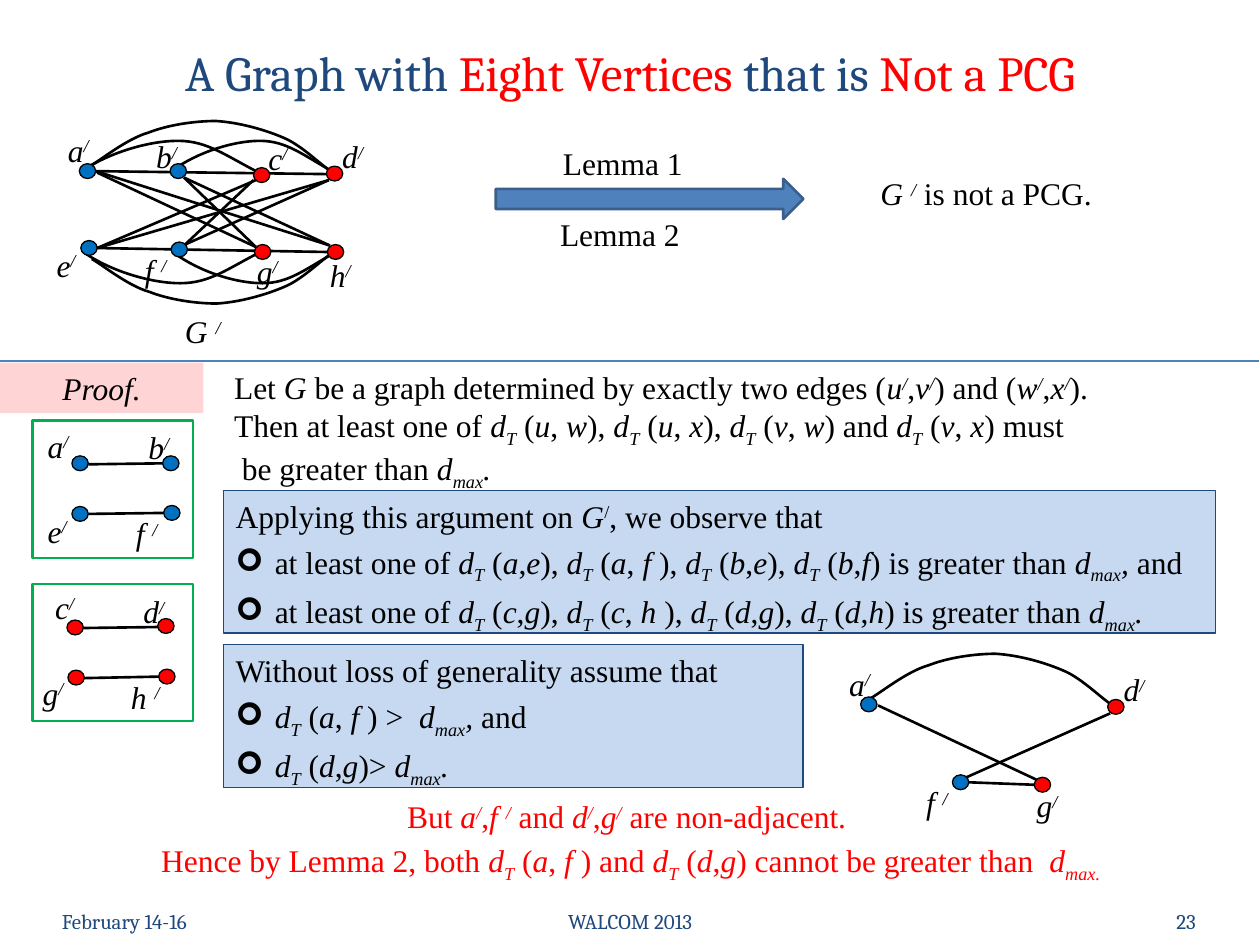
from lxml import etree
from pptx import Presentation
from pptx.dml.color import RGBColor
from pptx.enum.shapes import MSO_CONNECTOR, MSO_SHAPE
from pptx.enum.text import MSO_ANCHOR, MSO_AUTO_SIZE, PP_ALIGN
from pptx.oxml.ns import qn
from pptx.util import Cm, Pt

STRAIGHT = MSO_CONNECTOR.STRAIGHT
RECT, OVAL, ARROW = MSO_SHAPE.RECTANGLE, MSO_SHAPE.OVAL, MSO_SHAPE.DOWN_ARROW
TOP, MIDDLE = MSO_ANCHOR.TOP, MSO_ANCHOR.MIDDLE
GROW, FIXED = MSO_AUTO_SIZE.SHAPE_TO_FIT_TEXT, MSO_AUTO_SIZE.NONE
LEFT, CENTER, RIGHT = PP_ALIGN.LEFT, PP_ALIGN.CENTER, PP_ALIGN.RIGHT

BLACK = RGBColor(0x00, 0x00, 0x00)
RED = RGBColor(0xFF, 0x00, 0x00)
BLUE = RGBColor(0x00, 0x70, 0xC0)
GREEN = RGBColor(0x00, 0xB0, 0x50)
NAVY = RGBColor(0x1F, 0x49, 0x7D)
PALE = RGBColor(0xC6, 0xD9, 0xF1)
STEEL = RGBColor(0x4F, 0x81, 0xBD)
STEEL_DARK = RGBColor(0x3A, 0x5F, 0x8C)

SERIF, HEADING = "Times New Roman", "Cambria"
DMAX = "*d_max_"
LOW_ARC = [(0, .88), (.14, .38), (.36, 0), (.53, 0), (.7, 0), (.8, .46), (1, 1)]
HIGH_ARC = [(0, .88), (.04, .78), (.15, .35), (.24, .23), (.32, .08), (.43, 0), (.52, 0),
            (.62, .03), (.73, .18), (.81, .35), (.88, .5), (.96, .88), (1, 1)]

GRAPH_VERTICES = [
    ("a", BLUE, 1.6, 3.3, 1.12, 2.51), ("b", BLUE, 3.43, 3.3, 2.9, 2.64),
    ("c", RED, 5.11, 3.38, 5.16, 2.67), ("d", RED, 6.58, 3.35, 6.65, 2.64),
    ("e", BLUE, 1.63, 4.85, 0.89, 4.83), ("f ", BLUE, 3.45, 4.88, 2.67, 4.93),
    ("g", RED, 5.13, 4.93, 4.93, 4.95), ("h", RED, 6.6, 4.93, 6.4, 5.03)]
GRAPH_EDGES = [
    (1.96, 3.48, 5.16, 4.98), (1.93, 3.45, 6.65, 4.95), (3.71, 3.58, 5.16, 4.98),
    (3.71, 3.58, 6.65, 4.95), (5.16, 3.63, 1.96, 5), (6.63, 3.63, 1.96, 5),
    (5.11, 3.63, 3.73, 4.93), (6.63, 3.63, 3.73, 4.93), (1.93, 3.45, 6.6, 3.51),
    (1.96, 5, 6.6, 5.08)]
PAIR_VERTICES = [
    ("a", BLUE, 1.45, 9.19, 0.71, 8.48), ("b", BLUE, 3.28, 9.19, 2.74, 8.51),
    ("e", BLUE, 1.45, 10.21, 0.71, 10.19), ("f ", BLUE, 3.3, 10.19, 2.49, 10.24),
    ("c", RED, 1.35, 12.5, 0.86, 11.73), ("d", RED, 3.18, 12.47, 2.64, 11.81),
    ("g", RED, 1.37, 13.51, 0.61, 13.46), ("h ", RED, 3.2, 13.49, 2.39, 13.54)]
PAIR_EDGES = [(1.78, 9.36, 3.28, 9.34), (1.78, 10.36, 3.3, 10.34),
              (1.68, 12.66, 3.18, 12.64), (1.68, 13.67, 3.2, 13.64)]
CYCLE_VERTICES = [
    ("a", BLUE, 17.35, 14.05, 16.87, 13.28), ("d", RED, 22.33, 14.1, 22.4, 13.39),
    ("f ", BLUE, 19.2, 15.62, 18.42, 15.67), ("g", RED, 20.85, 15.67, 20.65, 15.72)]
CYCLE_EDGES = [(17.7, 14.22, 20.9, 15.72), (22.38, 14.38, 19.48, 15.67),
               (19.53, 15.77, 20.85, 15.82)]


def dist(u, v, sep=","):
    """Return the markup of the tree distance between two leaves."""
    return f"*d_T_* (*{u}*{sep}*{v}*)"


def add_runs(p, markup, size, color, font):
    """Add runs, toggling italic *, superscript ^, subscript _ and red |."""
    on = dict.fromkeys("*^_|", False)
    text = ""
    for ch in markup + "*":
        if ch not in on:
            text += ch
            continue
        if text:
            r = p.add_run()
            r.text = text
            r.font.name, r.font.size = font, Pt(size)
            r.font.italic = on["*"]
            r.font.color.rgb = RED if on["|"] else color
            if on["^"] or on["_"]:
                r._r.get_or_add_rPr().set("baseline", "30000" if on["^"] else "-25000")
            text = ""
        on[ch] = not on[ch]


def add_bullet(p):
    """Give a paragraph a hanging arrow bullet."""
    pPr = p._p.get_or_add_pPr()
    pPr.set("marL", str(Cm(0.79)))
    pPr.set("indent", str(-Cm(0.79)))
    etree.SubElement(pPr, qn("a:buFont")).set("typeface", "Wingdings")
    etree.SubElement(pPr, qn("a:buChar")).set("char", "➢")


def fill_text(sp, lines, size=18, color=BLACK, font=SERIF, align=LEFT, anchor=TOP,
              wrap=True, grow=GROW, gaps=(), bullets=False):
    """Write the lines into a shape, with gaps before the later ones."""
    tf = sp.text_frame
    tf.word_wrap, tf.auto_size, tf.vertical_anchor = wrap, grow, anchor
    for i, line in enumerate(lines):
        p = tf.paragraphs[0] if i == 0 else tf.add_paragraph()
        p.alignment = align
        if i and gaps:
            p.space_before = Pt(gaps[i - 1])
        if i and bullets:
            add_bullet(p)
        add_runs(p, line, size, color, font)


def add_text(s, x, y, w, h, lines, **style):
    """Add a text box."""
    fill_text(s.shapes.add_textbox(Cm(x), Cm(y), Cm(w), Cm(h)), lines, **style)


def add_box(s, kind, x, y, w, h, fill=None, line=None, width=0.75):
    """Add a preset shape with optional fill and outline."""
    sp = s.shapes.add_shape(kind, Cm(x), Cm(y), Cm(w), Cm(h))
    sp.shadow.inherit = False
    for part, color in ((sp.fill, fill), (sp.line.fill, line)):
        if color is None:
            part.background()
        else:
            part.solid()
            part.fore_color.rgb = color
    if line is not None:
        sp.line.width = Pt(width)
    return sp


def add_line(s, x1, y1, x2, y2, color=BLACK, width=1.5):
    """Add a straight line."""
    c = s.shapes.add_connector(STRAIGHT, Cm(x1), Cm(y1), Cm(x2), Cm(y2))
    c.line.color.rgb, c.line.width = color, Pt(width)
    etree.SubElement(c._element.spPr, qn("a:effectLst"))


def add_arc(s, curve, x, y, w, h, flip=False):
    """Draw a chain of Bezier curves, given in unit coordinates, inside a box."""
    points = [(Cm(x + w * u), Cm(y + h * (1 - v if flip else v))) for u, v in curve]
    builder = s.shapes.build_freeform(*points[0])
    builder.add_line_segments(points[1:], close=False)
    sp = builder.convert_to_shape()
    outline = next(sp._element.iter(qn("a:path")))
    segments = outline.findall(qn("a:lnTo"))
    for i in range(0, len(segments), 3):
        bezier = etree.SubElement(outline, qn("a:cubicBezTo"))
        for segment in segments[i:i + 3]:
            bezier.append(segment[0])
            outline.remove(segment)
    sp.shadow.inherit = False
    sp.fill.background()
    sp.line.color.rgb, sp.line.width = BLACK, Pt(1.5)


def add_graph(s, vertices, edges):
    """Draw the edges, then the labels and dots of the vertices."""
    for edge in edges:
        add_line(s, *edge)
    for name, color, x, y, label_x, label_y in vertices:
        add_text(s, label_x, label_y, 1.12, 1.02, [f"*{name}^/"], wrap=False)
        add_box(s, OVAL, x, y, 0.33, 0.3, color, BLACK)


def add_panel(s, x, y, w, lines):
    """Add a pale panel with a lead line and bulleted lines."""
    sp = add_box(s, RECT, x, y, w, 2.87, PALE, NAVY)
    fill_text(sp, lines, gaps=(4.6, 3.5), bullets=True)


def main():
    """Build the slide and save it."""
    prs = Presentation()
    prs.slide_width, prs.slide_height = Cm(25.4), Cm(19.05)
    s = prs.slides.add_slide(prs.slide_layouts[6])

    heading = dict(color=NAVY, font=HEADING, anchor=MIDDLE, grow=FIXED)
    add_text(s, 0, 0, 25.4, 2.92, ["A Graph with| Eight Vertices| that is |Not a PCG"],
             size=28, align=CENTER, **heading)
    for x, w, text, align in ((1, 5.92, "February 14-16", LEFT),
                              (8.68, 8.05, "WALCOM 2013", CENTER), (18.44, 5.92, "23", RIGHT)):
        add_text(s, x, 18.06, w, 1.02, [text], size=12, align=align, **heading)

    add_box(s, ARROW, 12.69, 0.91, 0.81, 6.2, STEEL, STEEL_DARK, 1.5).rotation = 270
    add_text(s, 11.1, 2.77, 2.95, 1.02, ["Lemma 1"], wrap=False)
    add_text(s, 11.04, 4.21, 2.95, 1.02, ["Lemma 2"], wrap=False)
    add_text(s, 3.48, 6.17, 1.42, 1.02, ["*G ^/"], wrap=False)
    add_text(s, 17.5, 3.39, 6.38, 1.02, ["*G ^/^* is not a PCG."])

    for flip, x, y, high_x, high_y in ((False, 1.7, 2.84, 1.83, 2.44), (True, 1.75, 5.05, 1.85, 5.1)):
        add_arc(s, LOW_ARC, x, y, 3.56, 0.66, flip)
        add_arc(s, LOW_ARC, x + 1.8, y, 3.28, 0.66, flip)
        add_arc(s, HIGH_ARC, high_x, high_y, 4.85, 1.02, flip)
    add_graph(s, GRAPH_VERTICES, GRAPH_EDGES)

    add_line(s, -0.02, 7.28, 25.38, 7.28, STEEL, 1)
    sp = add_box(s, RECT, 0, 7.31, 4.1, 1.02, RED)
    color = sp.fill._xPr.find(qn("a:solidFill"))[0]
    etree.SubElement(color, qn("a:alpha")).set("val", "17000")
    fill_text(sp, ["*Proof."], align=CENTER, anchor=MIDDLE, grow=FIXED)
    add_text(s, 4.47, 7.3, 23.32, 3.3, [
        "Let *G* be a graph determined by exactly two edges (*u^/^*,*v^/^*) and (*w^/^*,*x^/^*).",
        f"Then at least one of {dist('u', 'w', ', ')}, {dist('u', 'x', ', ')}, "
        f"{dist('v', 'w', ', ')} and {dist('v', 'x', ', ')} must",
        f" be greater than {DMAX}."])

    for y in (8.48, 11.77):
        add_box(s, RECT, 0.66, y, 3.23, 2.77, line=GREEN, width=1.5)
    add_graph(s, PAIR_VERTICES, PAIR_EDGES)

    add_panel(s, 4.5, 9.89, 20.01, [
        "Applying this argument on *G*^/^, we observe that",
        f"at least one of {dist('a', 'e')}, {dist('a', 'f ', ', ')}, {dist('b', 'e')}, "
        f"{dist('b', 'f')} is greater than {DMAX}, *and",
        f"at least one of {dist('c', 'g')}, {dist('c', 'h ', ', ')}, {dist('d', 'g')}, "
        f"{dist('d', 'h')} is greater than {DMAX}."])
    add_panel(s, 4.5, 13, 11.69, [
        "Without loss of generality assume that",
        f"{dist('a', 'f ', ', ')} >  {DMAX}, *and",
        f"{dist('d', 'g')}> {DMAX}."])

    add_arc(s, HIGH_ARC, 17.55, 13.18, 4.85, 1.02)
    add_graph(s, CYCLE_VERTICES, CYCLE_EDGES)

    add_text(s, 0.51, 15.95, 24.41, 1.9, [
        "But *a^/^*,*f ^/^* and *d^/^*,*g^/^* are non-adjacent. ",
        f"Hence by Lemma 2, both {dist('a', 'f ', ', ')} and {dist('d', 'g')} "
        "cannot be greater than  *d_max."], color=RED, align=CENTER, gaps=(3.5,))
    prs.save("out.pptx")


if __name__ == "__main__":
    main()
